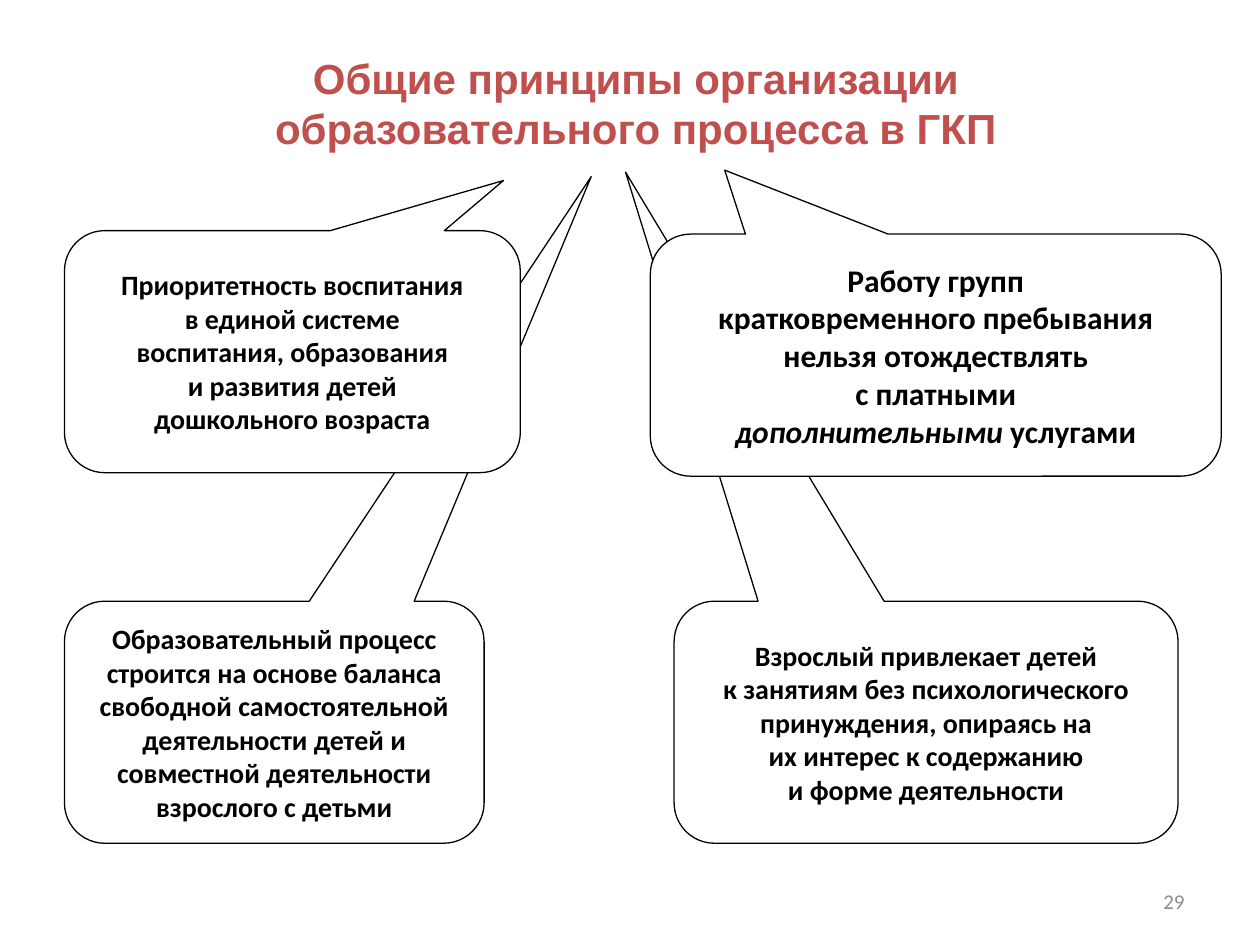
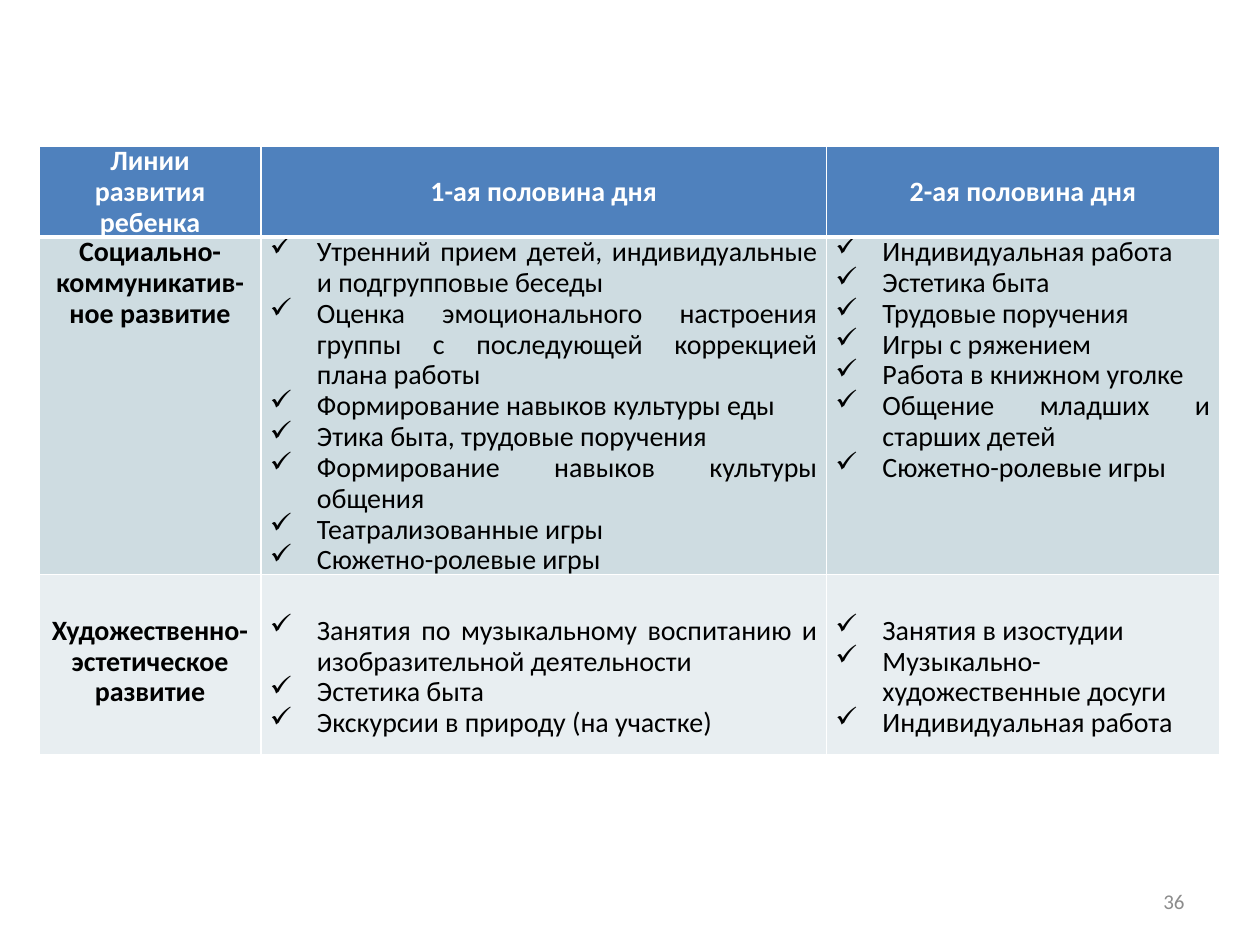
from lxml import etree
from pptx import Presentation
from pptx.dml.color import RGBColor
from pptx.enum import shapes, text
from pptx.oxml.ns import qn
from pptx.util import Cm, Pt

BLACK = RGBColor(0x00, 0x00, 0x00)
WHITE = RGBColor(0xFF, 0xFF, 0xFF)
RED = RGBColor(0xC0, 0x50, 0x4D)
GREY = RGBColor(0x8C, 0x8C, 0x8C)
HEADER_BLUE = RGBColor(0x4F, 0x81, 0xBD)
BAND_DARK = RGBColor(0xCE, 0xDC, 0xE1)
BAND_LIGHT = RGBColor(0xE8, 0xEE, 0xF1)

CENTER = text.PP_ALIGN.CENTER
MIDDLE = text.MSO_ANCHOR.MIDDLE

CALLOUT_HEIGHT = 4.88
# left, top, width, tip of the pointer (cm), font size, lines; *...* is italic
PRINCIPLES = [
    (1.3, 12.12, 8.46, (11.92, 3.56), 16,
     ["Образовательный процесс", "строится на основе баланса",
      "свободной самостоятельной", "деятельности детей и",
      "совместной деятельности", "взрослого с детьми"]),
    (13.59, 12.12, 10.16, (12.61, 3.47), 16,
     ["Взрослый привлекает детей", "к занятиям без психологического",
      "принуждения, опираясь на", "их интерес к содержанию",
      "и форме деятельности"]),
    (1.3, 4.65, 9.19, (10.15, 3.64), 16,
     ["Приоритетность воспитания", "в единой системе",
      "воспитания, образования", "и развития детей",
      "дошкольного возраста"]),
    (13.11, 4.72, 11.51, (14.61, 3.43), 18,
     ["Работу групп", "кратковременного пребывания",
      "нельзя отождествлять", "с платными",
      "*дополнительными* услугами"]),
]

DAY_PLAN = [
    [["Линии", "развития", "ребенка"], ["1-ая половина дня"], ["2-ая половина дня"]],
    [["Социально-коммуникатив-ное развитие"],
     ["Утренний прием детей, индивидуальные и подгрупповые беседы",
      "Оценка эмоционального настроения группы с последующей коррекцией плана работы",
      "Формирование навыков культуры еды",
      "Этика быта, трудовые поручения",
      "Формирование навыков культуры общения",
      "Театрализованные игры",
      "Сюжетно-ролевые игры"],
     ["Индивидуальная работа", "Эстетика быта", "Трудовые поручения",
      "Игры с ряжением", "Работа в книжном уголке",
      "Общение младших и старших детей", "Сюжетно-ролевые игры"]],
    [["Художественно-эстетическое развитие"],
     ["Занятия по музыкальному воспитанию и изобразительной деятельности",
      "Эстетика быта",
      "Экскурсии в природу (на участке)"],
     ["Занятия в изостудии", "Музыкально-художественные досуги",
      "Индивидуальная работа"]],
]
COLUMN_WIDTHS = [4.47, 11.4, 7.92]
ROW_HEIGHTS = [1.83, 6.8, 3.63]
ROW_FILLS = [HEADER_BLUE, BAND_DARK, BAND_LIGHT]
ROW_TOP_MARGINS = [0, 0, 0.83]


def add_check_bullet(para, indent):
    properties = para._p.get_or_add_pPr()
    properties.set("marL", str(indent))
    properties.set("indent", str(-indent))
    etree.SubElement(properties, qn("a:buChar"), char="✓")


def set_borders(cell, **widths):
    """Draw white borders; widths in points are keyed by side: L, R, T, B."""
    properties = cell._tc.get_or_add_tcPr()
    for position, side in enumerate("LRTB"):
        line = etree.Element(qn(f"a:ln{side}"), w=str(Pt(widths.get(side, 1))))
        fill = etree.SubElement(line, qn("a:solidFill"))
        etree.SubElement(fill, qn("a:srgbClr"), val=str(WHITE))
        properties.insert(position, line)


class SlideBuilder:
    def __init__(self, deck):
        self.deck = deck
        self.page = None

    def start_page(self, number):
        self.page = self.deck.slides.add_slide(self.deck.slide_layouts[6])
        self.text_box(18.21, 17.65, 5.92, 1.02, str(number), 12, GREY,
                      align=text.PP_ALIGN.RIGHT)

    def fill_text(self, frame, lines, size, color, font="Calibri", bold=False, align=CENTER):
        """Set one paragraph per line; text between asterisks is italic."""
        frame.text = "\n".join(lines)
        for para, line in zip(frame.paragraphs, lines):
            para.alignment = align
            para.text = ""
            for index, part in enumerate(line.split("*")):
                if not part:
                    continue
                span = para.add_run()
                span.text = part
                span.font.name = font
                span.font.size = Pt(size)
                span.font.bold = bold
                span.font.italic = index % 2 == 1
                span.font.color.rgb = color

    def text_box(self, left, top, width, height, words, size, color, **style):
        box = self.page.shapes.add_textbox(Cm(left), Cm(top), Cm(width), Cm(height))
        box.text_frame.word_wrap = True
        box.text_frame.vertical_anchor = MIDDLE
        self.fill_text(box.text_frame, [words], size, color, **style)

    def title(self, words):
        self.text_box(2.34, 0.91, 20.96, 2.31, words, 24, RED, font="Arial", bold=True)

    def callout(self, left, top, width, tip, size, lines):
        box = self.page.shapes.add_shape(
            shapes.MSO_SHAPE.ROUNDED_RECTANGULAR_CALLOUT,
            Cm(left), Cm(top), Cm(width), Cm(CALLOUT_HEIGHT))
        box.adjustments[0] = (tip[0] - left) / width - 0.5
        box.adjustments[1] = (tip[1] - top) / CALLOUT_HEIGHT - 0.5
        box.shadow.inherit = False
        box.fill.solid()
        box.fill.fore_color.rgb = WHITE
        box.line.color.rgb = BLACK
        box.line.width = Pt(0.75)
        box.text_frame.word_wrap = False
        box.text_frame.vertical_anchor = MIDDLE
        self.fill_text(box.text_frame, lines, size, BLACK, bold=True)

    def table(self, left, top, rows):
        table = self.page.shapes.add_table(
            len(rows), len(COLUMN_WIDTHS), Cm(left), Cm(top),
            Cm(sum(COLUMN_WIDTHS)), Cm(sum(ROW_HEIGHTS))).table
        for column, width in zip(table.columns, COLUMN_WIDTHS):
            column.width = Cm(width)
        for row, height in zip(table.rows, ROW_HEIGHTS):
            row.height = Cm(height)
        for row_index, row in enumerate(rows):
            for column_index, lines in enumerate(row):
                self.cell(table.cell(row_index, column_index), lines, row_index, column_index)

    def cell(self, cell, lines, row_index, column_index):
        is_header = row_index == 0
        is_list = not is_header and column_index > 0
        cell.margin_left = cell.margin_right = Cm(0.18)
        cell.margin_top = Cm(ROW_TOP_MARGINS[row_index])
        cell.margin_bottom = 0
        cell.vertical_anchor = MIDDLE if is_header else text.MSO_ANCHOR.TOP
        cell.fill.solid()
        cell.fill.fore_color.rgb = ROW_FILLS[row_index]
        set_borders(cell, T=3 if row_index == 1 else 1, B=3 if is_header else 1)
        self.fill_text(cell.text_frame, lines, 16, WHITE if is_header else BLACK,
                       bold=not is_list,
                       align=text.PP_ALIGN.JUSTIFY if is_list else CENTER)
        for para in cell.text_frame.paragraphs:
            para.line_spacing = 0.9
            if is_list:
                add_check_bullet(para, Cm(0.95))


def main():
    deck = Presentation()
    deck.slide_width, deck.slide_height = Cm(25.4), Cm(19.05)
    builder = SlideBuilder(deck)

    builder.start_page(29)
    builder.title("Общие принципы организации образовательного процесса в ГКП")
    for principle in PRINCIPLES:
        builder.callout(*principle)

    builder.start_page(36)
    builder.table(0.79, 2.95, DAY_PLAN)

    deck.save("out.pptx")


if __name__ == "__main__":
    main()
